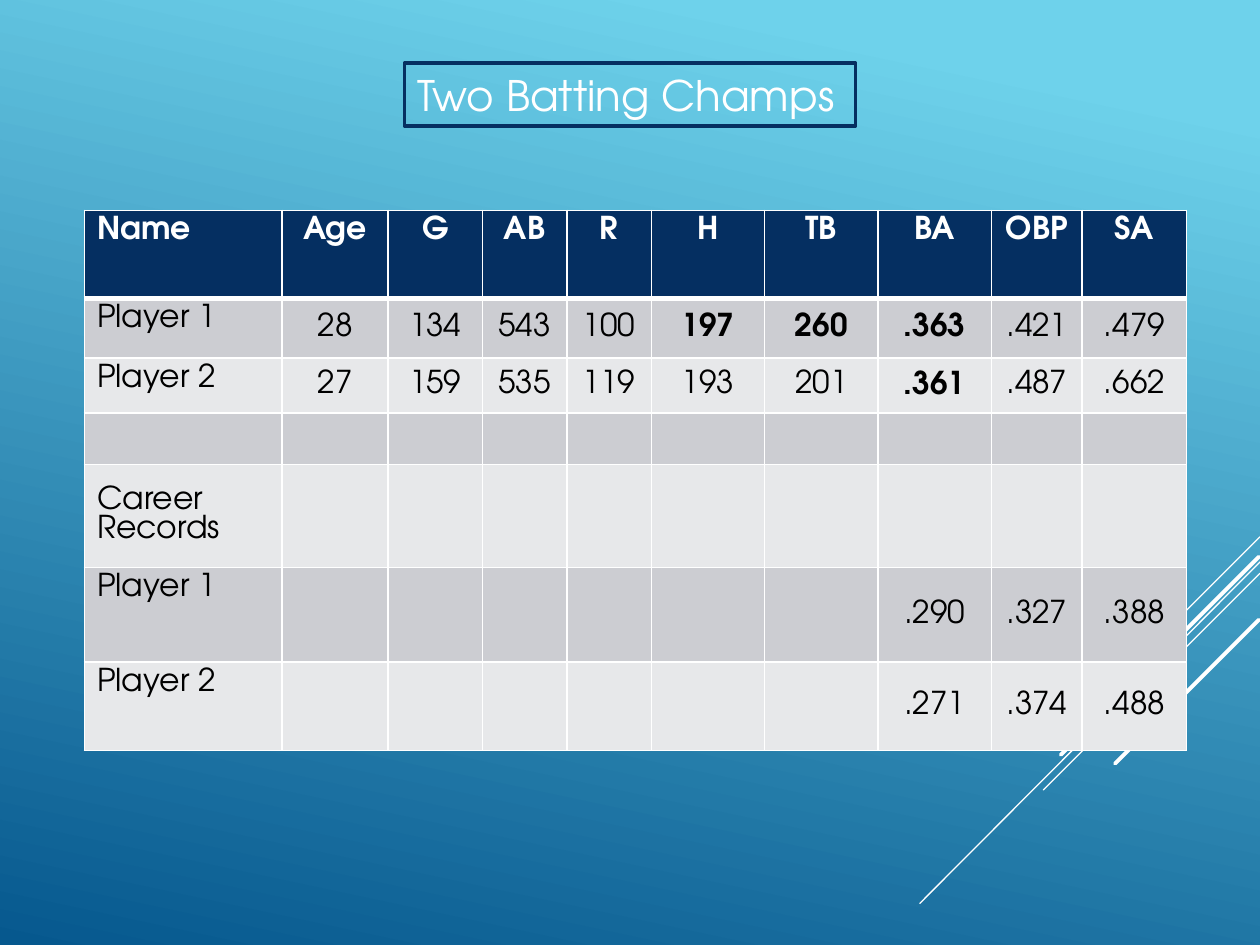
from dataclasses import dataclass

from lxml import etree
from pptx import Presentation
from pptx.dml.color import RGBColor
from pptx.enum.text import MSO_ANCHOR, MSO_AUTO_SIZE, PP_ALIGN
from pptx.oxml.ns import qn
from pptx.util import Inches, Pt

LEFT, CENTER = PP_ALIGN.LEFT, PP_ALIGN.CENTER
TOP, MIDDLE = MSO_ANCHOR.TOP, MSO_ANCHOR.MIDDLE
NO_AUTOFIT = MSO_AUTO_SIZE.NONE
TITLE_ONLY = 5


@dataclass(frozen=True)
class Theme:
    font: str = "TeX Gyre Adventor"
    title_size: float = 24
    cell_size: float = 18
    cell_leading: float = 16.6
    white: str = "FFFFFF"
    black: str = "000000"
    navy: str = "052F61"
    bands: tuple = ("CCCDD2", "E7E8EA")
    sky: tuple = ((0.1, "6ED2EB"), (1, "06588E"))
    sky_angle: float = 258


COLUMN_WIDTHS = [1.57, 0.84, 0.75, 0.67, 0.67, 0.9, 0.9, 0.9, 0.72, 0.83]
ROW_HEIGHTS = [0.7, 0.47, 0.44, 0.37, 0.82, 0.75, 0.7]
NO_SEASON = [""] * 6
BATTING = [
    ["Name", "Age", "G", "AB", "R", "H", "TB", "BA", "OBP", "SA"],
    ["Player 1", "28", "134", "543", "100", "197", "260", ".363", ".421", ".479"],
    ["Player 2", "27", "159", "535", "119", "193", "201", ".361", ".487", ".662"],
    [""] * 10,
    ["Career Records"] + [""] * 9,
    ["Player 1", *NO_SEASON, ".290", ".327", ".388"],
    ["Player 2", *NO_SEASON, ".271", ".374", ".488"],
]
LEAGUE_BESTS = {(1, 5), (1, 6), (1, 7), (2, 7)}
CAREER_HEADING = (4, 0)
STREAKS = [
    (10, 4.26, 9.17, 5.09, 0.75),
    (10, 4.46, 7.3, 7.17, 0.75),
    (10, 4.55, 8.28, 6.27, 0.75),
    (9.99, 4.42, 8.42, 5.99, 2.25),
    (9.99, 4.92, 8.85, 6.06, 2.25),
]


def apply(target, formats):
    for name, value in formats.items():
        setattr(target, name, value)


class SlideBuilder:
    """Draws themed elements on the current slide."""

    def __init__(self, slide, theme):
        self.slide = slide
        self.theme = theme

    def background(self):
        fill = self.slide.background.fill
        fill.gradient()
        fill.gradient_angle = self.theme.sky_angle
        for stop, (position, color) in zip(fill.gradient_stops, self.theme.sky):
            stop.position = position
            stop.color.rgb = RGBColor.from_string(color)

    def streak(self, x1, y1, x2, y2, weight):
        streak = self.slide.shapes.add_connector(
            1, Inches(x1), Inches(y1), Inches(x2), Inches(y2))
        streak.line.color.rgb = RGBColor.from_string(self.theme.white)
        streak.line.width = Pt(weight)
        properties = streak._element.spPr
        properties.find(qn("a:ln")).set("cap", "rnd")
        etree.SubElement(properties, qn("a:effectLst"))

    def text(self, frame, words, size, color, bold=False, align=LEFT, leading=None):
        paragraph = frame.paragraphs[0]
        apply(paragraph, {"alignment": align, "line_spacing": leading})
        if words:
            run = paragraph.add_run()
            run.text = words
            apply(run.font, {"name": self.theme.font, "size": Pt(size), "bold": bold})
            run.font.color.rgb = RGBColor.from_string(color)

    def title(self, words, left, top, width, height):
        title = self.slide.shapes.title
        apply(title, {"left": Inches(left), "top": Inches(top),
                      "width": Inches(width), "height": Inches(height)})
        title.line.color.rgb = RGBColor.from_string(self.theme.navy)
        title.line.width = Pt(2)
        apply(title.text_frame, {"auto_size": NO_AUTOFIT, "word_wrap": True,
                                 "vertical_anchor": MIDDLE})
        self.text(title.text_frame, words, self.theme.title_size, self.theme.white)

    def border(self, cell, weights):
        properties = cell._tc.get_or_add_tcPr()
        for side, weight in zip("LRTB", weights):
            edge = etree.SubElement(properties, qn(f"a:ln{side}"), w=str(Pt(weight)))
            fill = etree.SubElement(edge, qn("a:solidFill"))
            etree.SubElement(fill, qn("a:srgbClr"), val=self.theme.white)

    def cell(self, cell, row, column, words):
        theme = self.theme
        header = row == 0
        centered = not header and (column > 0 or (row, column) == CAREER_HEADING)
        self.border(cell, (1, 1, 3 if row == 1 else 1, 3 if header else 1))
        cell.fill.solid()
        band = theme.navy if header else theme.bands[(row - 1) % 2]
        cell.fill.fore_color.rgb = RGBColor.from_string(band)
        cell.vertical_anchor = MIDDLE if centered else TOP
        self.text(cell.text_frame, words, theme.cell_size,
                  theme.white if header else theme.black,
                  bold=header or (row, column) in LEAGUE_BESTS,
                  align=CENTER if column else LEFT,
                  leading=Pt(theme.cell_leading))

    def table(self, rows, left, top, widths, heights):
        table = self.slide.shapes.add_table(
            len(rows), len(widths), Inches(left), Inches(top),
            Inches(sum(widths)), Inches(sum(heights))).table
        for column, width in zip(table.columns, widths):
            column.width = Inches(width)
        for row, height in zip(table.rows, heights):
            row.height = Inches(height)
        for r, values in enumerate(rows):
            for c, words in enumerate(values):
                self.cell(table.cell(r, c), r, c, words)


def main():
    deck = Presentation()
    apply(deck, {"slide_width": Inches(10), "slide_height": Inches(7.5)})
    slide = deck.slides.add_slide(deck.slide_layouts[TITLE_ONLY])
    builder = SlideBuilder(slide, Theme())
    builder.background()
    for streak in STREAKS:
        builder.streak(*streak)
    builder.table(BATTING, 0.67, 1.67, COLUMN_WIDTHS, ROW_HEIGHTS)
    builder.title("Two Batting Champs", 3.21, 0.5, 3.58, 0.5)
    deck.save("out.pptx")


if __name__ == "__main__":
    main()
